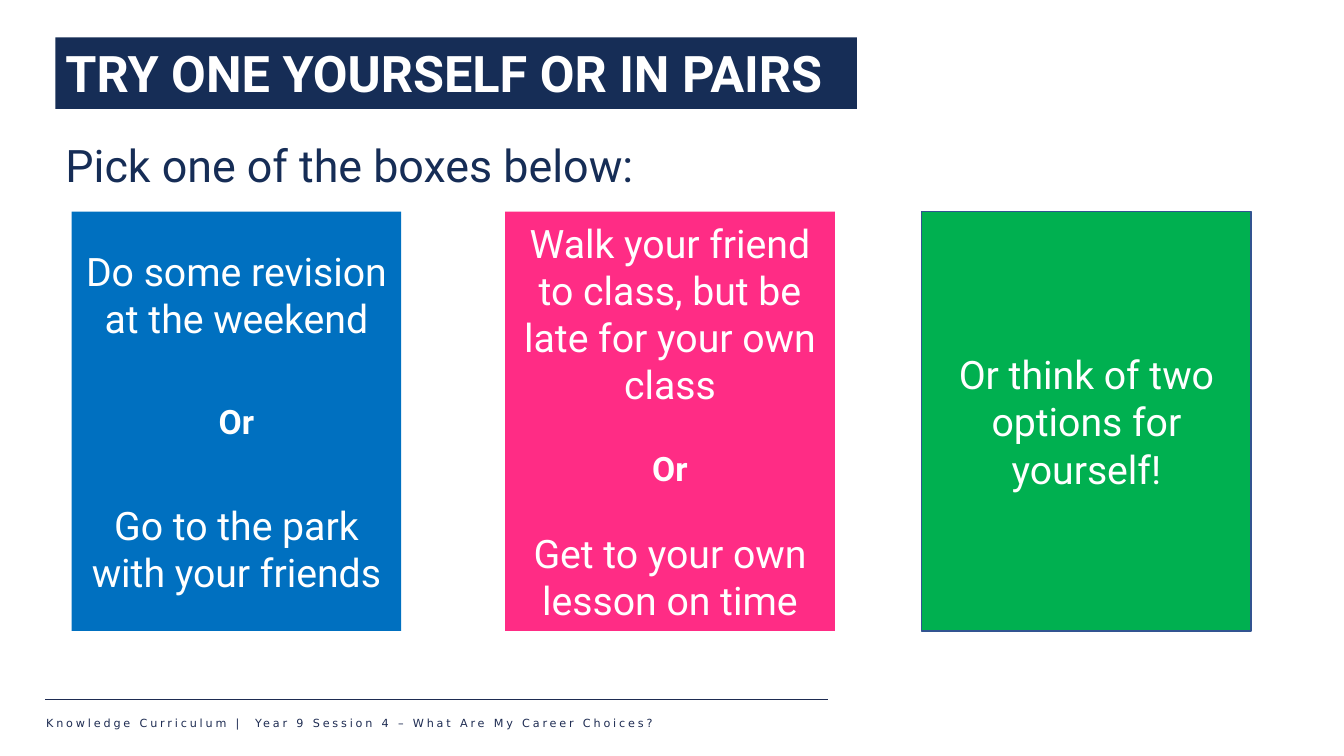
from pptx import Presentation
from pptx.dml.color import RGBColor
from pptx.enum.shapes import MSO_CONNECTOR, MSO_SHAPE
from pptx.enum.text import MSO_ANCHOR, PP_ALIGN
from pptx.oxml.ns import qn
from pptx.util import Inches, Pt

RECTANGLE = MSO_SHAPE.RECTANGLE
STRAIGHT = MSO_CONNECTOR.STRAIGHT
MIDDLE, TOP = MSO_ANCHOR.MIDDLE, MSO_ANCHOR.TOP
CENTER, LEFT = PP_ALIGN.CENTER, PP_ALIGN.LEFT

WHITE = RGBColor(0xFF, 0xFF, 0xFF)
NAVY = RGBColor(0x16, 0x2D, 0x56)
FOOTER_NAVY = RGBColor(0x1E, 0x2C, 0x52)
BLUE = RGBColor(0x00, 0x70, 0xC0)
PINK = RGBColor(0xFF, 0x2C, 0x85)
GREEN = RGBColor(0x00, 0xB0, 0x50)
OUTLINE = RGBColor(0x32, 0x54, 0x91)

HEADING_FONT = "Roboto"
FOOTER_FONT = "DejaVu Sans"

CARD_TOP, CARD_WIDTH, CARD_HEIGHT = 2.1, 3.27, 4.16
# left, fill, outline, options, points of space around "Or"
CARDS = [
    (0.71, BLUE, None,
     ["Do some revision at the weekend", "Go to the park with your friends"], 43),
    (5.01, PINK, None,
     ["Walk your friend to class, but be late for your own class",
      "Get to your own lesson on time"], 29),
    (9.14, GREEN, OUTLINE, ["Or think of two options for yourself!"], 0),
]


def add_run(paragraph, text, size, color, bold=False, font=HEADING_FONT):
    run = paragraph.add_run()
    run.text = text
    run.font.name = font
    run.font.size = Pt(size)
    run.font.bold = bold
    run.font.color.rgb = color
    return run


def add_panel(slide, left, top, width, height, fill, outline=None):
    """Add a filled rectangle and return its text frame."""
    panel = slide.shapes.add_shape(RECTANGLE, Inches(left), Inches(top),
                                   Inches(width), Inches(height))
    panel.shadow.inherit = False
    panel.fill.solid()
    panel.fill.fore_color.rgb = fill
    if outline is None:
        panel.line.fill.background()
    else:
        panel.line.color.rgb = outline
        panel.line.width = Pt(1)
    panel.text_frame.word_wrap = True
    return panel.text_frame


def add_label(slide, left, top, width, height):
    """Add a wrapping text box and return its first paragraph."""
    label = slide.shapes.add_textbox(Inches(left), Inches(top),
                                     Inches(width), Inches(height))
    label.text_frame.word_wrap = True
    return label.text_frame.paragraphs[0]


def add_title(slide, left, top, width, height):
    frame = add_panel(slide, left, top, width, height, NAVY)
    frame.vertical_anchor = TOP
    title = frame.paragraphs[0]
    title.alignment = LEFT
    add_run(title, "TRY ONE YOURSELF OR IN PAIRS", 36, WHITE, bold=True)


def add_card(slide, left, fill, outline, options, gap):
    """Add one choice card, with "Or" between its options."""
    frame = add_panel(slide, left, CARD_TOP, CARD_WIDTH, CARD_HEIGHT, fill, outline)
    frame.vertical_anchor = MIDDLE
    first = frame.paragraphs[0]
    first.alignment = CENTER
    add_run(first, options[0], 28, WHITE)
    for option in options[1:]:
        for text, size, bold in (("Or", 24, True), (option, 28, False)):
            paragraph = frame.add_paragraph()
            paragraph.alignment = CENTER
            paragraph.space_before = Pt(gap)
            add_run(paragraph, text, size, WHITE, bold)


def add_footer(slide, left, top, width, height):
    rule_left, rule_top = Inches(left + 0.09), Inches(top - 0.12)
    rule = slide.shapes.add_connector(STRAIGHT, rule_left, rule_top,
                                      rule_left + Inches(7.76), rule_top)
    rule.line.color.rgb = FOOTER_NAVY
    rule.line.width = Pt(0.5)
    properties = rule._element.spPr
    properties.append(properties.makeelement(qn("a:effectLst"), {}))

    course = add_run(add_label(slide, left, top, width, height),
                     "Knowledge Curriculum |  Year 9 Session 4 – What Are My Career Choices?",
                     8, FOOTER_NAVY, font=FOOTER_FONT)
    course.font._element.set("spc", "200")


def main():
    presentation = Presentation()
    presentation.slide_width = Inches(13.33)
    presentation.slide_height = Inches(7.5)
    slide = presentation.slides.add_slide(presentation.slide_layouts[6])

    add_footer(slide, 0.36, 7.06, 7.04, 0.24)
    for card in CARDS:
        add_card(slide, *card)
    add_run(add_label(slide, 0.55, 1.32, 7.47, 0.64),
            "Pick one of the boxes below:", 32, NAVY)
    add_title(slide, 0.55, 0.37, 7.95, 0.71)

    presentation.save("out.pptx")


if __name__ == "__main__":
    main()
